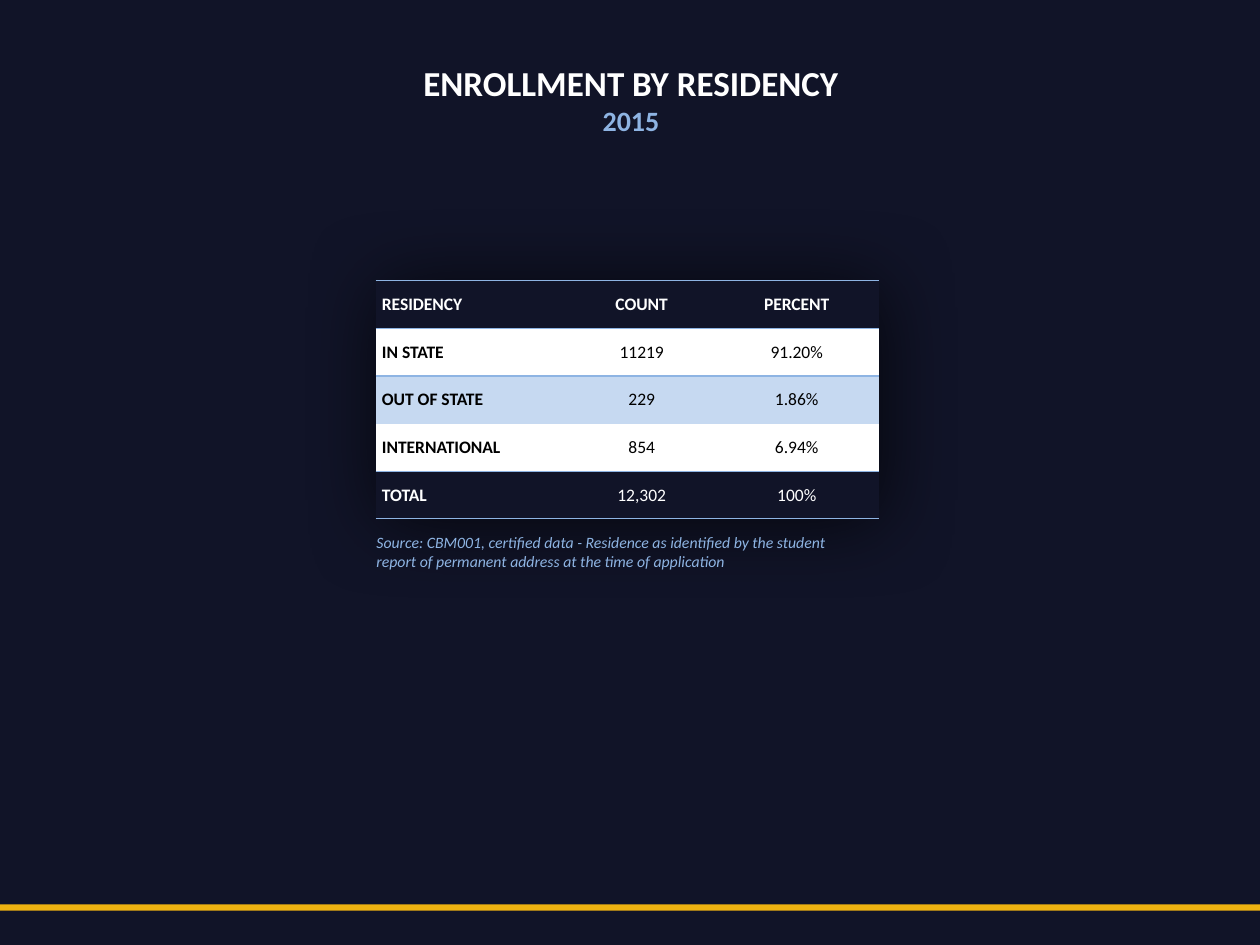
from pptx import Presentation
from pptx.dml.color import RGBColor
from pptx.enum.shapes import MSO_SHAPE as Shape
from pptx.enum.text import MSO_ANCHOR as Anchor, PP_ALIGN as Align
from pptx.oxml import parse_xml
from pptx.oxml.ns import nsdecls
from pptx.util import Cm, Pt

NAVY = RGBColor(0x11, 0x14, 0x28)
WHITE = RGBColor(0xFF, 0xFF, 0xFF)
BLACK = RGBColor(0, 0, 0)
SKY = RGBColor(0x8E, 0xB4, 0xE3)
PALE = RGBColor(0xC6, 0xD9, 0xF1)
GOLD = RGBColor(0xEE, 0xB2, 0x11)

NO_STYLE = "{2D5ABB26-0587-4C30-8999-92F81FD0307C}"
ROWS = [
    ("RESIDENCY", "COUNT", "PERCENT"),
    ("IN STATE", "11219", "91.20%"),
    ("OUT OF STATE", "229", "1.86%"),
    ("INTERNATIONAL", "854", "6.94%"),
    ("TOTAL", "12,302", "100%"),
]
ROW_COLORS = [(NAVY, WHITE), (WHITE, BLACK), (PALE, BLACK), (WHITE, BLACK), (NAVY, WHITE)]
ROW_EDGES = ["TB", "T", "", "B", "TB"]


def write(para, text, font="Calibri", size=10, color=WHITE, bold=False, italic=False, align=Align.LEFT):
    para.alignment = align
    span = para.add_run()
    span.text = text
    span.font.name = font
    span.font.size = Pt(size)
    span.font.color.rgb = color
    span.font.bold = bold
    span.font.italic = italic


def set_edges(cell, edges, color):
    properties = cell._tc.get_or_add_tcPr()
    for side in reversed(edges):
        properties.insert(0, parse_xml(
            f'<a:ln{side} {nsdecls("a")} w="{Pt(0.75)}"><a:solidFill>'
            f'<a:srgbClr val="{color}"/></a:solidFill></a:ln{side}>'))


class SlideBuilder:
    def __init__(self, page, font="Calibri"):
        self.page = page
        self.font = font

    def background(self, color):
        fill = self.page.background.fill
        fill.solid()
        fill.fore_color.rgb = color

    def text(self, left, top, width, height, lines):
        box = self.page.shapes.add_textbox(Cm(left), Cm(top), Cm(width), Cm(height))
        frame = box.text_frame
        frame.word_wrap = True
        for index, (text, style) in enumerate(lines):
            para = frame.add_paragraph() if index else frame.paragraphs[0]
            write(para, text, font=self.font, **style)

    def bar(self, left, top, width, height, color):
        bar = self.page.shapes.add_shape(Shape.RECTANGLE, Cm(left), Cm(top), Cm(width), Cm(height))
        bar.shadow.inherit = False
        bar.fill.solid()
        bar.fill.fore_color.rgb = color
        bar.line.fill.background()

    def table(self, left, top, widths, row_height, rows):
        frame = self.page.shapes.add_table(
            len(rows), len(widths), Cm(left), Cm(top), Cm(sum(widths)), Cm(row_height * len(rows)))
        table = frame.table
        properties = table._tbl.tblPr
        properties.find("{*}tableStyleId").text = NO_STYLE
        properties.insert(0, parse_xml(
            f'<a:effectLst {nsdecls("a")}><a:outerShdw blurRad="{Pt(46)}" dist="{Pt(3)}" dir="2700000" '
            'algn="tl" rotWithShape="0"><a:srgbClr val="000000"><a:alpha val="70000"/></a:srgbClr>'
            '</a:outerShdw></a:effectLst>'))
        for column, width in zip(table.columns, widths):
            column.width = Cm(width)
        for row_index, texts in enumerate(rows):
            table.rows[row_index].height = Cm(row_height)
            fill, color = ROW_COLORS[row_index]
            for column_index, text in enumerate(texts):
                cell = table.cell(row_index, column_index)
                cell.vertical_anchor = Anchor.MIDDLE
                cell.margin_left = cell.margin_right = Cm(0.13)
                cell.margin_top = cell.margin_bottom = Cm(0.13)
                cell.fill.solid()
                cell.fill.fore_color.rgb = fill
                set_edges(cell, ROW_EDGES[row_index], SKY)
                write(cell.text_frame.paragraphs[0], text, font=self.font, color=color,
                      bold=row_index == 0 or column_index == 0,
                      align=Align.CENTER if column_index else Align.LEFT)


def main():
    deck = Presentation()
    deck.slide_width, deck.slide_height = Cm(25.4), Cm(19.05)
    builder = SlideBuilder(deck.slides.add_slide(deck.slide_layouts[6]))
    builder.background(NAVY)
    builder.table(7.57, 5.66, [3.89, 2.95, 3.3], 0.96, ROWS)
    builder.text(4.39, 1.12, 16.66, 2.57, [
        ("ENROLLMENT BY RESIDENCY", dict(size=20, bold=True, align=Align.CENTER)),
        ("2015", dict(size=16, color=SKY, bold=True, align=Align.CENTER)),
    ])
    builder.text(7.34, 10.62, 10.24, 1.02, [
        ("Source: CBM001, certified data - Residence as identified by the student "
         "report of permanent address at the time of application",
         dict(size=9, color=SKY, italic=True)),
    ])
    builder.bar(-0.23, 18.23, 25.63, 0.13, GOLD)
    deck.save("out.pptx")


if __name__ == "__main__":
    main()
